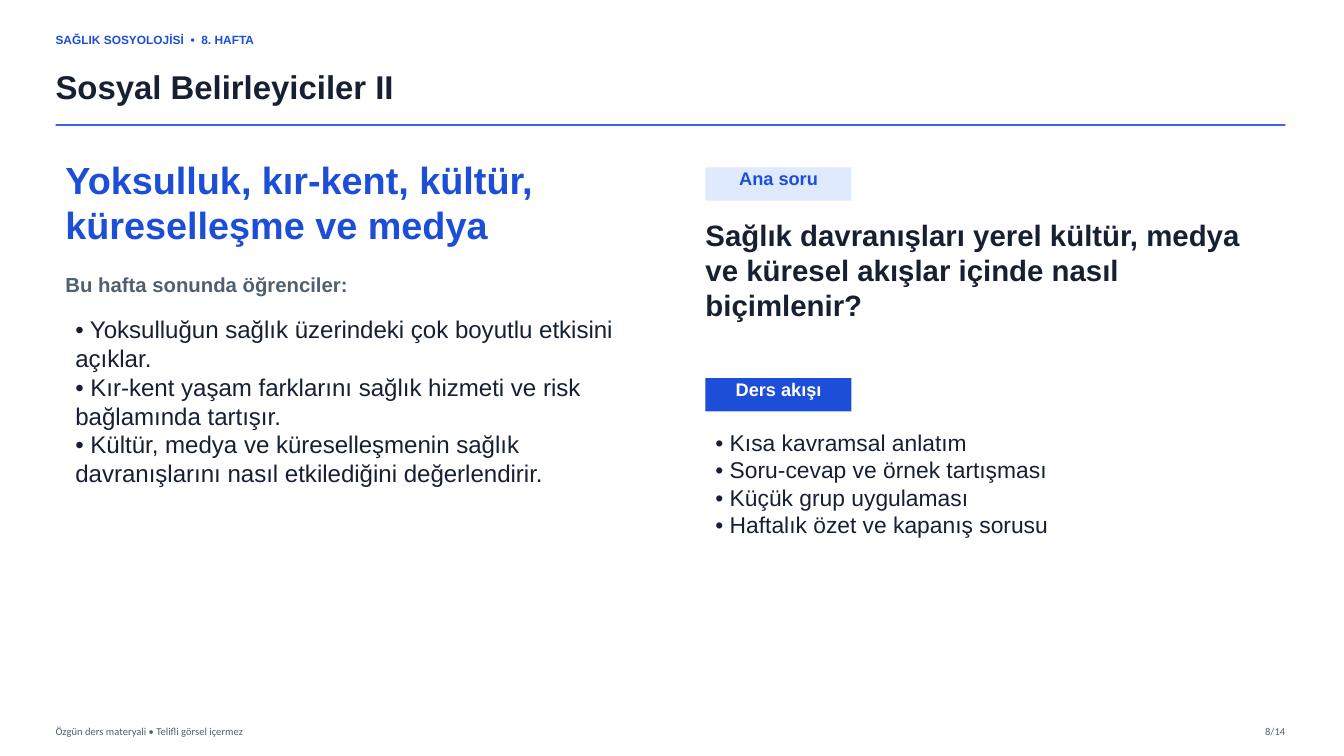
from lxml import etree
from pptx import Presentation
from pptx.dml.color import RGBColor
from pptx.enum.shapes import MSO_CONNECTOR, MSO_SHAPE
from pptx.enum.text import MSO_ANCHOR, PP_ALIGN
from pptx.oxml.ns import qn
from pptx.util import Cm, Pt

LEFT, CENTER, RIGHT = PP_ALIGN.LEFT, PP_ALIGN.CENTER, PP_ALIGN.RIGHT
TOP, MIDDLE = MSO_ANCHOR.TOP, MSO_ANCHOR.MIDDLE
RECTANGLE, STRAIGHT = MSO_SHAPE.RECTANGLE, MSO_CONNECTOR.STRAIGHT

BLUE, PALE, INK, GREY, WHITE = "1D4ED8", "DFEAFE", "172033", "506070", "FFFFFF"
MARGIN, RIGHT_EDGE, COLUMN = 1.4, 32.39, 17.78


def rgb(value):
    return RGBColor.from_string(value)


def write(sp, lines, size, color, bold=False, font="Arial", align=LEFT, anchor=TOP):
    tf = sp.text_frame
    tf.word_wrap = True
    tf.vertical_anchor = anchor
    tf.margin_left = tf.margin_right = tf.margin_top = tf.margin_bottom = 0
    for i, line in enumerate(lines):
        p = tf.paragraphs[0] if i == 0 else tf.add_paragraph()
        p.alignment = align
        r = p.add_run()
        r.text = line
        r.font.name = font
        r.font.size = Pt(size)
        r.font.bold = bold
        r.font.color.rgb = rgb(color)


prs = Presentation()
prs.slide_width, prs.slide_height = Cm(33.87), Cm(19.05)
s = prs.slides.add_slide(prs.slide_layouts[6])
s.background.fill.solid()
s.background.fill.fore_color.rgb = rgb(WHITE)

# Header and footer
frame_texts = [
    (MARGIN, 0.64, 9.14, 0.71, "SAĞLIK SOSYOLOJİSİ  •  8. HAFTA", 8.5, BLUE, True, "Arial", LEFT),
    (MARGIN, 1.47, 30.35, 1.4, "Sosyal Belirleyiciler II", 23.5, INK, True, "Arial", LEFT),
    (MARGIN, 18.14, 15.24, 0.56, "Özgün ders materyali • Telifli görsel içermez",
     7.5, GREY, False, "Calibri", LEFT),
    (30.74, 18.14, 1.65, 0.56, "8/14", 7.5, GREY, False, "Calibri", RIGHT),
]
for x, y, w, h, text, size, color, bold, font, align in frame_texts:
    sp = s.shapes.add_textbox(Cm(x), Cm(y), Cm(w), Cm(h))
    write(sp, [text], size, color, bold, font, align, MIDDLE)

# Rule under the title
rule = s.shapes.add_connector(STRAIGHT, Cm(MARGIN), Cm(3.15), Cm(RIGHT_EDGE), Cm(3.15))
rule.line.width = Pt(1.2)
rule.line.color.rgb = rgb(BLUE)
rule_color = next(rule._element.spPr.iter(qn("a:srgbClr")))
etree.SubElement(rule_color, qn("a:alpha")).set("val", "85000")
etree.SubElement(rule._element.spPr, qn("a:effectLst"))

# Column texts: goals on the left, question and lesson flow on the right
goals = [
    "• Yoksulluğun sağlık üzerindeki çok boyutlu etkisini açıklar.",
    "• Kır-kent yaşam farklarını sağlık hizmeti ve risk bağlamında tartışır.",
    "• Kültür, medya ve küreselleşmenin sağlık davranışlarını nasıl etkilediğini değerlendirir.",
]
flow = [
    "• Kısa kavramsal anlatım",
    "• Soru-cevap ve örnek tartışması",
    "• Küçük grup uygulaması",
    "• Haftalık özet ve kapanış sorusu",
]
topic = "Yoksulluk, kır-kent, kültür, küreselleşme ve medya"
question = "Sağlık davranışları yerel kültür, medya ve küresel akışlar içinde nasıl biçimlenir?"
column_texts = [
    (1.65, 3.94, 13.46, 2.41, [topic], 27, BLUE, True),
    (1.65, 6.86, 12.45, 0.76, ["Bu hafta sonunda öğrenciler:"], 14.5, GREY, True),
    (1.9, 7.92, 13.97, 5.08, goals, 17.2, INK, False),
    (COLUMN, 5.46, 13.59, 2.79, [question], 21, INK, True),
    (COLUMN + 0.25, 10.8, 13.59, 3.94, flow, 16.3, INK, False),
]
for x, y, w, h, lines, size, color, bold in column_texts:
    sp = s.shapes.add_textbox(Cm(x), Cm(y), Cm(w), Cm(h))
    write(sp, lines, size, color, bold)

# Labels
for y, text, fill, color in [(4.22, "Ana soru", PALE, BLUE), (9.53, "Ders akışı", BLUE, WHITE)]:
    sp = s.shapes.add_shape(RECTANGLE, Cm(COLUMN), Cm(y), Cm(3.68), Cm(0.84))
    sp.shadow.inherit = False
    sp.fill.solid()
    sp.fill.fore_color.rgb = rgb(fill)
    sp.line.fill.background()
    write(sp, [text], 13, color, True, align=CENTER)

prs.save("out.pptx")
